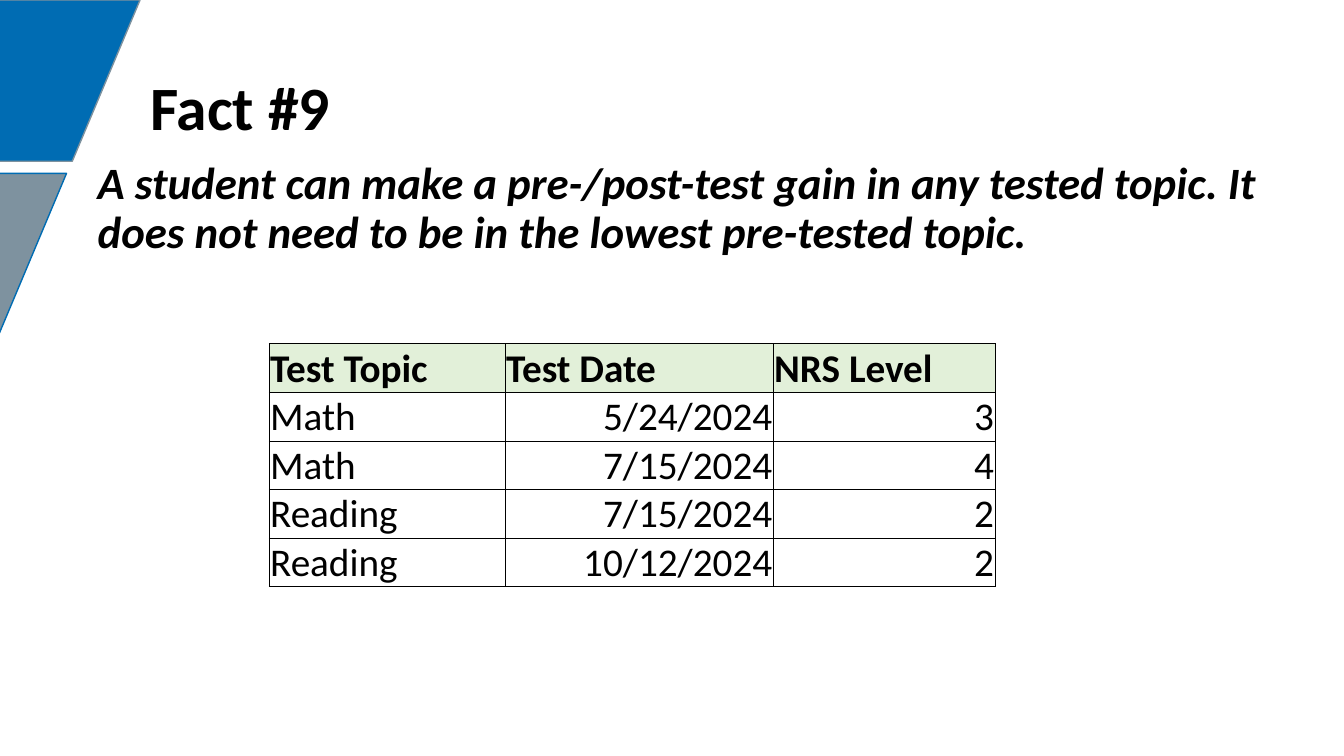
from lxml import etree
from pptx import Presentation, util as u
from pptx.dml.color import RGBColor
from pptx.enum import shapes, text
from pptx.oxml.ns import qn

BLUE, GRAY, BLACK, GREEN = "006CB3", "7E929F", "000000", "E2F0D9"


def color(value):
    """Turn a hex string into a colour."""
    return RGBColor.from_string(value)


class FactSlide:
    """Draw styled elements on one slide, placed in percent of its size."""

    def __init__(self, presentation):
        """Add a title-only slide to the presentation."""
        self.width = presentation.slide_width
        self.height = presentation.slide_height
        self.slide = presentation.slides.add_slide(presentation.slide_layouts[5])

    def across(self, percent):
        """Return a share of the slide's width."""
        return u.Emu(round(self.width * percent / 100))

    def down(self, percent):
        """Return a share of the slide's height."""
        return u.Emu(round(self.height * percent / 100))

    def box(self, left, top, width, height):
        """Return a position and size as lengths."""
        return self.across(left), self.down(top), self.across(width), self.down(height)

    def set_text(self, frame, words, size, bold=False, italic=False,
                 align=text.PP_ALIGN.LEFT, spacing=None):
        """Fill a text frame with one styled paragraph."""
        frame.text = words
        paragraph = frame.paragraphs[0]
        paragraph.alignment = align
        paragraph.line_spacing = spacing
        font = paragraph.font
        font.name, font.size = "Calibri", u.Pt(size)
        font.bold, font.italic = bold, italic
        font.color.rgb = color(BLACK)

    def band(self, left, top, fill, line):
        """Add a slanted band that runs off the left edge."""
        shape = self.slide.shapes.add_shape(
            shapes.MSO_SHAPE.FLOWCHART_DATA, *self.box(left, top, 25.2, 21.33))
        shape.shadow.inherit = False
        shape.fill.solid()
        shape.fill.fore_color.rgb = color(fill)
        shape.line.color.rgb = color(line)
        shape.line.width = u.Pt(1)

    def title(self, words, *place):
        """Place and fill the title."""
        shape = self.slide.shapes.title
        shape.left, shape.top, shape.width, shape.height = self.box(*place)
        frame = shape.text_frame
        frame.auto_size = text.MSO_AUTO_SIZE.NONE
        frame.vertical_anchor = text.MSO_ANCHOR.MIDDLE
        self.set_text(frame, words, 44, bold=True, spacing=0.9)

    def statement(self, words, *place):
        """Add the wrapped statement below the title."""
        frame = self.slide.shapes.add_textbox(*self.box(*place)).text_frame
        frame.word_wrap = True
        self.set_text(frame, words, 32, bold=True, italic=True, spacing=0.9)

    def borders(self, cell):
        """Draw a thin line on each side of a cell."""
        properties = cell._tc.get_or_add_tcPr()
        for index, side in enumerate(("lnL", "lnR", "lnT", "lnB")):
            line = etree.Element(qn(f"a:{side}"), w=str(u.Pt(0.5)))
            fill = etree.SubElement(line, qn("a:solidFill"))
            etree.SubElement(fill, qn("a:srgbClr"), val=BLACK)
            properties.insert(index, line)

    def cell(self, cell, words, header, number):
        """Fill and style one table cell."""
        cell.margin_left = cell.margin_right = cell.margin_top = u.Inches(0.01)
        cell.margin_bottom = 0
        cell.vertical_anchor = text.MSO_ANCHOR.BOTTOM
        if header:
            cell.fill.solid()
            cell.fill.fore_color.rgb = color(GREEN)
        else:
            cell.fill.background()
        align = text.PP_ALIGN.RIGHT if number else text.PP_ALIGN.LEFT
        self.set_text(cell.text_frame, words, 28, bold=header, align=align)
        self.borders(cell)

    def table(self, rows, left, top, widths, row_height):
        """Add a bordered table whose first row is its header."""
        place = self.box(left, top, sum(widths), row_height * len(rows))
        table = self.slide.shapes.add_table(len(rows), len(widths), *place).table
        table.horz_banding = False
        for column, width in zip(table.columns, widths):
            column.width = self.across(width)
        for row_index, row in enumerate(rows):
            table.rows[row_index].height = self.down(row_height)
            for column_index, words in enumerate(row):
                header = row_index == 0
                self.cell(table.cell(row_index, column_index), words, header,
                          number=not header and column_index > 0)


def main():
    """Build and save the slide."""
    presentation = Presentation()
    presentation.slide_width = u.Inches(13.33)
    presentation.slide_height = u.Inches(7.5)
    fact = FactSlide(presentation)
    fact.band(-14.78, 0, BLUE, GRAY)
    fact.band(-20.25, 22.93, GRAY, BLUE)
    fact.title("Fact #9", 10.43, 8.13, 69.17, 13.07)
    fact.statement(
        "A student can make a pre-/post-test gain in any tested topic. "
        "It does not need to be in the lowest pre-tested topic.",
        6.53, 20.67, 89.42, 33.6)
    results = [
        ("Test Topic", "Test Date", "NRS Level"),
        ("Math", "5/24/2024", "3"),
        ("Math", "7/15/2024", "4"),
        ("Reading", "7/15/2024", "2"),
        ("Reading", "10/12/2024", "2"),
    ]
    fact.table(results, 20.03, 45.47, (17.55, 19.95, 16.5), 6.43)
    presentation.save("out.pptx")


if __name__ == "__main__":
    main()
